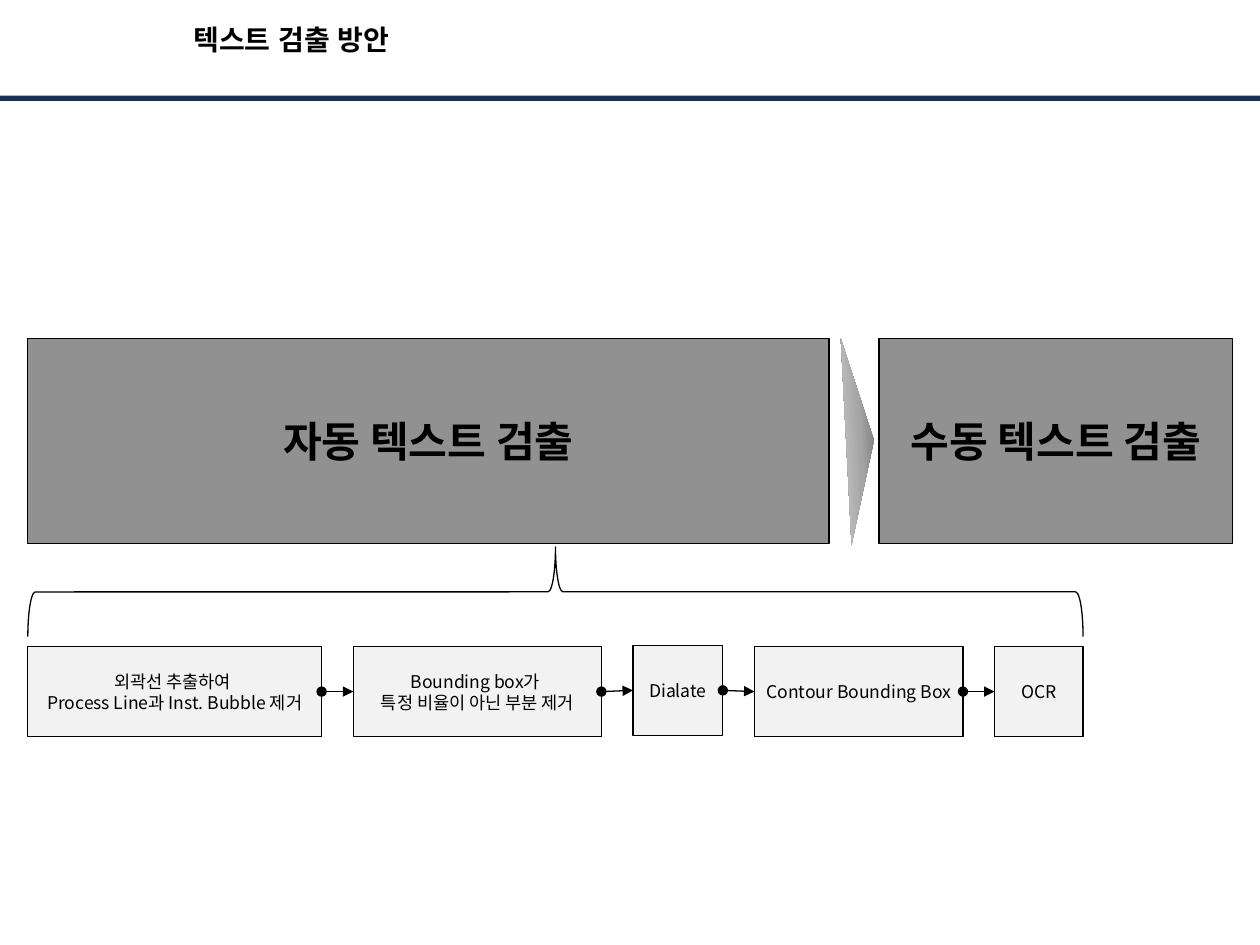
import copy
from dataclasses import dataclass

import pptx
import pptx.dml.color
import pptx.enum.shapes
import pptx.enum.text
import pptx.oxml
import pptx.oxml.ns
import pptx.util

Pt = pptx.util.Pt
Shape = pptx.enum.shapes.MSO_SHAPE
Anchor = pptx.enum.text.MSO_ANCHOR
qn = pptx.oxml.ns.qn


@dataclass(frozen=True)
class Theme:
    """Colours, fonts and type sizes of the slide."""
    ink: str = "000000"
    rule: str = "1B2E5A"
    stage: str = "919191"
    step: str = "F2F2F2"
    wedge: tuple = ((0, "6C6C6C"), (0.48, "A4A4A4"), (1, "C7C7C7"))
    title_font: str = "Arial"
    body_font: str = "Noto Sans CJK KR"
    title_size: float = 16
    stage_size: float = 24
    step_size: float = 10
    line_width: float = 0.75


class SlideBuilder:
    """Draws styled elements on one page."""

    def __init__(self, page, theme):
        """Keep the page and its theme."""
        self.page = page
        self.theme = theme

    def colour(self, value):
        """Turn a hex string into a colour."""
        return pptx.dml.color.RGBColor.from_string(value)

    def shape(self, kind, frame, fill=None, outlined=True, rotation=0):
        """Add a preset shape."""
        shape = self.page.shapes.add_shape(kind, *map(Pt, frame))
        shape.shadow.inherit = False
        shape.rotation = rotation
        if fill:
            shape.fill.solid()
            shape.fill.fore_color.rgb = self.colour(fill)
        else:
            shape.fill.background()
        if outlined:
            shape.line.color.rgb = self.colour(self.theme.ink)
            shape.line.width = Pt(self.theme.line_width)
        else:
            shape.line.fill.background()
        return shape

    def label(self, shape, lines, font, size, bold, anchor, wrap):
        """Fill a shape with centred lines of text."""
        frame = shape.text_frame
        frame.word_wrap = wrap
        frame.vertical_anchor = anchor
        para = frame.paragraphs[0]
        para.alignment = pptx.enum.text.PP_ALIGN.CENTER
        for index, line in enumerate(lines):
            if index:
                para.add_line_break()
            span = para.add_run()
            span.text = line
            span.font.name = font
            span.font.size = Pt(size)
            span.font.bold = bold
            span.font.color.rgb = self.colour(self.theme.ink)
            east_asian = pptx.oxml.parse_xml(
                f'<a:ea {pptx.oxml.ns.nsdecls("a")} typeface="{font}"/>')
            span.font._element.find(qn("a:latin")).addnext(east_asian)

    def title(self, frame, text):
        """Add the heading."""
        box = self.page.shapes.add_textbox(*map(Pt, frame))
        self.label(box, [text], self.theme.title_font, self.theme.title_size,
                   True, Anchor.TOP, True)

    def box(self, frame, lines, fill, size, bold=False):
        """Add an outlined rectangle with text."""
        box = self.shape(Shape.RECTANGLE, frame, fill)
        self.label(box, lines, self.theme.body_font, size, bold, Anchor.MIDDLE, False)
        return box

    def wedge(self, frame, rotation):
        """Add the shaded wedge between the stages."""
        wedge = self.shape(Shape.FLOWCHART_MERGE, frame, outlined=False, rotation=rotation)
        wedge.fill.gradient()
        wedge.fill.gradient_angle = 90
        stops = wedge._element.spPr.find(qn("a:gradFill")).find(qn("a:gsLst"))
        stops.append(copy.deepcopy(stops[0]))
        for stop, (position, value) in zip(wedge.fill.gradient_stops, self.theme.wedge):
            stop.position = position
            stop.color.rgb = self.colour(value)

    def arrow(self, start, end):
        """Join two boxes with an arrow from right side to left side."""
        arrow = self.page.shapes.add_connector(
            pptx.enum.shapes.MSO_CONNECTOR.STRAIGHT, 0, 0, 0, 0)
        arrow.begin_connect(start, 3)
        arrow.end_connect(end, 1)
        arrow.line.color.rgb = self.colour(self.theme.ink)
        arrow.line.width = Pt(self.theme.line_width)
        line = arrow._element.spPr.find(qn("a:ln"))
        for tag, kind in (("headEnd", "oval"), ("tailEnd", "triangle")):
            line.append(pptx.oxml.parse_xml(
                f'<a:{tag} {pptx.oxml.ns.nsdecls("a")} type="{kind}"/>'))
        arrow._element.spPr.append(pptx.oxml.parse_xml(
            f'<a:effectLst {pptx.oxml.ns.nsdecls("a")}/>'))


def main():
    """Build the text detection slide."""
    theme = Theme()
    deck = pptx.Presentation()
    deck.slide_width, deck.slide_height = Pt(717.84), Pt(538.56)
    slide = SlideBuilder(deck.slides.add_slide(deck.slide_layouts[6]), theme)

    slide.shape(Shape.RECTANGLE, (0, 54.6, 717.84, 2.9), theme.rule, outlined=False)
    slide.title((9.36, 9.36, 313.2, 33.84), "텍스트 검출 방안")

    stages = ((15.84, 456.5, "자동 텍스트 검출"), (500.8, 201.6, "수동 텍스트 검출"))
    for left, width, text in stages:
        slide.box((left, 193, width, 116.6), [text], theme.stage,
                  theme.stage_size, bold=True)
    slide.wedge((431.3, 243.4, 117.4, 15.84), 267)

    steps = (
        (167.4, 368.6, ["외곽선 추출하여 ", "Process Line과 Inst. Bubble 제거"]),
        (141.4, 368.6, ["Bounding box가 ", "특정 비율이 아닌 부분 제거"]),
        (51.2, 367.9, ["Dialate"]),
        (118.8, 368.6, ["Contour Bounding Box"]),
        (50.4, 368.6, ["OCR"]),
    )
    left, gap, boxes = 15.84, 18, []
    for width, top, lines in steps:
        boxes.append(slide.box((left, top, width, 51.1), lines, theme.step, theme.step_size))
        left += width + gap

    slide.shape(Shape.LEFT_BRACE, (290.9, 36.7, 51.1, 601.2), rotation=90)
    for start, end in zip(boxes, boxes[1:]):
        slide.arrow(start, end)

    deck.save("out.pptx")


if __name__ == "__main__":
    main()
